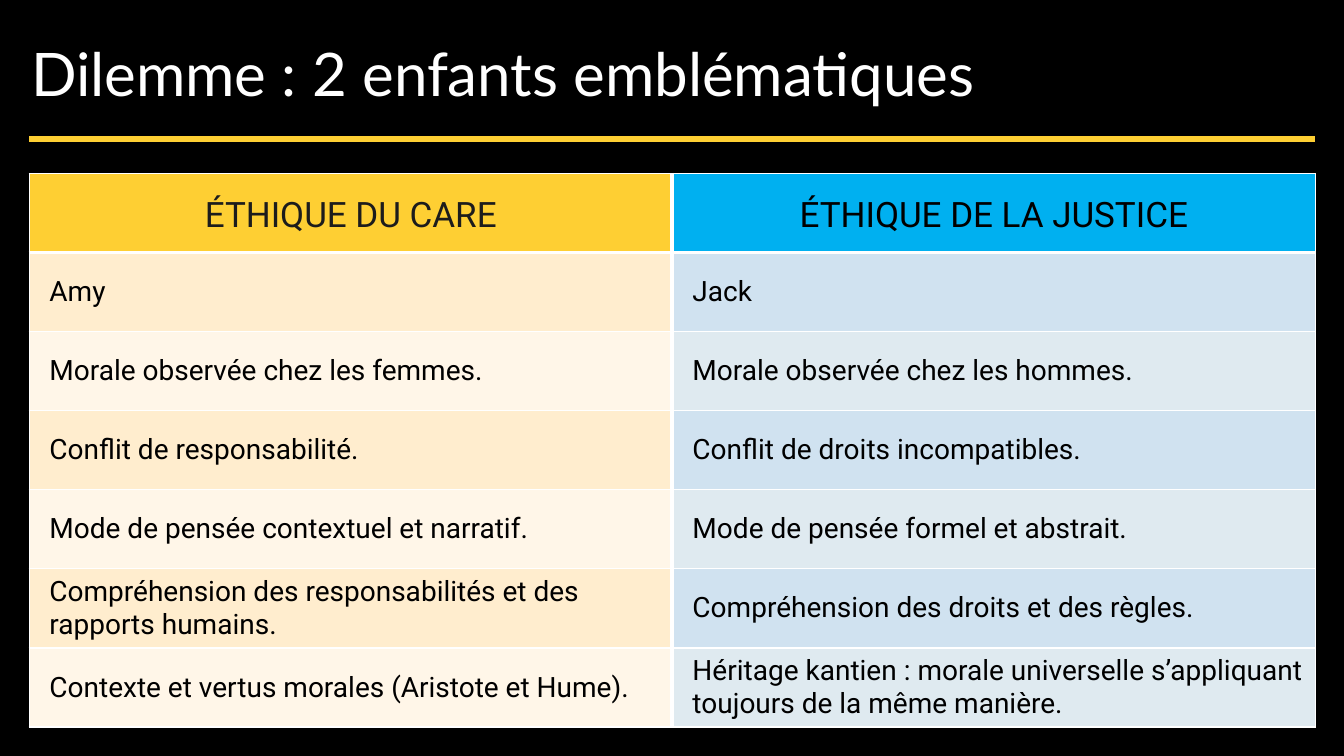
from lxml import etree
from pptx import Presentation
from pptx.dml.color import RGBColor
from pptx.enum.shapes import MSO_CONNECTOR
from pptx.enum.text import MSO_ANCHOR, PP_ALIGN
from pptx.oxml.ns import qn
from pptx.util import Pt

STRAIGHT = MSO_CONNECTOR.STRAIGHT
MIDDLE = MSO_ANCHOR.MIDDLE
LEFT, CENTER = PP_ALIGN.LEFT, PP_ALIGN.CENTER

MARGIN, CONTENT_WIDTH = 20.88, 918.72
TABLE_TOP, ROW_HEIGHT = 123.84, 56.5
YELLOW, WHITE, BLACK = "FECF33", "FFFFFF", "000000"
HEADER_FILLS = (YELLOW, "00B0F0")
HEADER_COLORS = ("1C1C1C", BLACK)
BAND_FILLS = (("FFEDCE", "D0E2F0"), ("FFF6E8", "DFEAF0"))
HEADERS = ("ÉTHIQUE DU CARE", "ÉTHIQUE DE LA JUSTICE")
COMPARISONS = (
    ("Amy", "Jack"),
    ("Morale observée chez les femmes.", "Morale observée chez les hommes."),
    ("Conflit de responsabilité.", "Conflit de droits incompatibles."),
    ("Mode de pensée contextuel et narratif.",
     "Mode de pensée formel et abstrait."),
    ("Compréhension des responsabilités et des rapports humains.",
     "Compréhension des droits et des règles."),
    ("Contexte et vertus morales (Aristote et Hume).",
     "Héritage kantien : morale universelle s’appliquant "
     "toujours de la même manière."),
)


def rgb(value):
    return RGBColor.from_string(value)


def set_font(p, name, size, color):
    p.font.name = name
    p.font.size = Pt(size)
    p.font.bold = False
    p.font.color.rgb = rgb(color)


def add_title(s, text):
    title = s.shapes.title
    title.left, title.top = Pt(15.12), Pt(20.16)
    title.width, title.height = Pt(924.48), Pt(63.36)
    tf = title.text_frame
    tf.text = text
    tf.word_wrap = True
    tf.vertical_anchor = MIDDLE
    p = tf.paragraphs[0]
    p.alignment = LEFT
    set_font(p, "Lato", 42.9, WHITE)


def add_rule(s, y):
    line = s.shapes.add_connector(
        STRAIGHT, Pt(MARGIN), Pt(y), Pt(MARGIN + CONTENT_WIDTH), Pt(y))
    line.line.color.rgb = rgb(YELLOW)
    line.line.width = Pt(4.5)
    etree.SubElement(line._element.spPr, qn("a:effectLst"))


def set_borders(cell, widths):
    tc_pr = cell._tc.get_or_add_tcPr()
    for i, (side, width) in enumerate(zip("LRTB", widths)):
        ln = etree.Element(qn(f"a:ln{side}"), w=str(Pt(width)))
        fill = etree.SubElement(ln, qn("a:solidFill"))
        etree.SubElement(fill, qn("a:srgbClr"), val=WHITE)
        tc_pr.insert(i, ln)


def fill_cell(cell, text, fill, borders):
    cell.text = text
    cell.vertical_anchor = MIDDLE
    cell.fill.solid()
    cell.fill.fore_color.rgb = rgb(fill)
    set_borders(cell, borders)
    return cell.text_frame.paragraphs[0]


def format_header(p, color):
    p.alignment = CENTER
    p.line_spacing = 1.15
    p.space_after = Pt(8)
    set_font(p, "Roboto", 25, color)


def format_body(cell, p):
    cell.margin_left, cell.margin_right = Pt(14.4), Pt(5)
    cell.margin_top = cell.margin_bottom = 0
    set_font(p, "Roboto", 20, BLACK)


def add_comparison(s):
    rows = (HEADERS,) + COMPARISONS
    table = s.shapes.add_table(
        len(rows), len(HEADERS), Pt(MARGIN), Pt(TABLE_TOP),
        Pt(CONTENT_WIDTH), Pt(ROW_HEIGHT * len(rows))).table
    for r, texts in enumerate(rows):
        table.rows[r].height = Pt(ROW_HEIGHT)
        fills = BAND_FILLS[(r - 1) % 2] if r else HEADER_FILLS
        for c, text in enumerate(texts):
            cell = table.cell(r, c)
            sides = (3, 1) if c else (1, 3)
            top, bottom = 3 if r == 1 else 1, 1 if r else 3
            p = fill_cell(cell, text, fills[c], sides + (top, bottom))
            if r:
                format_body(cell, p)
            else:
                format_header(p, HEADER_COLORS[c])


def main():
    prs = Presentation()
    prs.slide_width, prs.slide_height = Pt(960), Pt(540)
    s = prs.slides.add_slide(prs.slide_layouts[5])
    s.background.fill.solid()
    s.background.fill.fore_color.rgb = rgb(BLACK)
    add_comparison(s)
    add_rule(s, 99.36)
    add_title(s, "Dilemme : 2 enfants emblématiques")
    prs.save("out.pptx")


if __name__ == "__main__":
    main()
